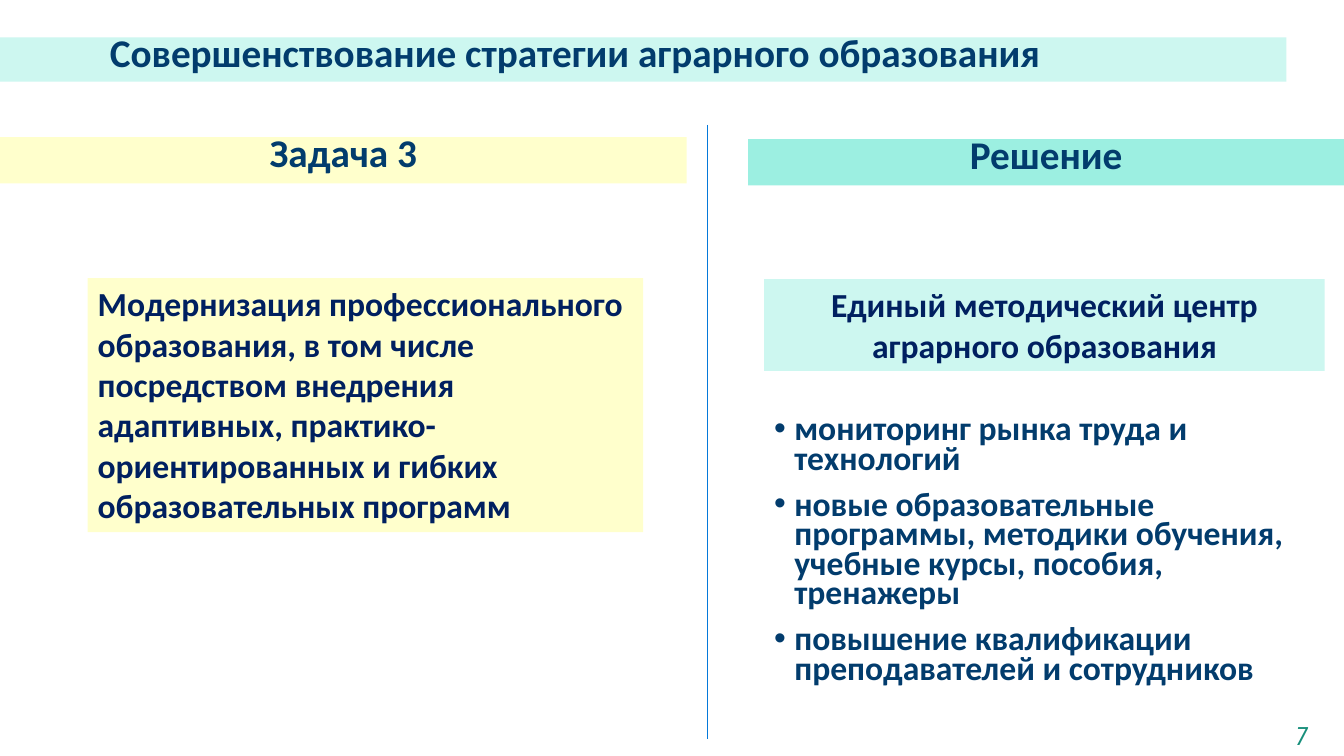
"""Builds a slide that sets an agrarian education task beside its solution."""
from dataclasses import dataclass
from typing import Optional

from lxml.etree import SubElement
from pptx import Presentation
from pptx.dml.color import RGBColor
from pptx.enum.shapes import MSO_CONNECTOR as Connector, MSO_SHAPE as Preset
from pptx.enum.text import MSO_ANCHOR as Anchor, MSO_AUTO_SIZE as AutoSize, PP_ALIGN as Align
from pptx.oxml.ns import qn
from pptx.util import Inches, Pt

COLORS = {
    "heading": "023C6D",
    "statement": "002060",
    "number": "178F7B",
    "divider": "0479DA",
    "yellow": "FFFFCC",
    "mint": "CDF7F0",
    "turquoise": "9CEFE1",
}


@dataclass
class Panel:
    text: str
    left: float
    top: float
    width: float
    height: float
    fill: str
    color: str = "heading"
    size: int = 28
    align: Align = Align.CENTER
    spacing: Optional[int] = 24
    inset: float = 0.1


PANELS = [
    Panel("Задача 3", 0, 1.36, 6.81, 0.46, "yellow"),
    Panel("Единый методический центр аграрного образования", 7.58, 2.77, 5.56, 0.91,
          "mint", "statement", 24, spacing=None),
    Panel("Модернизация профессионального образования, в том числе посредством внедрения "
          "адаптивных, практико-ориентированных и гибких образовательных программ",
          0.87, 2.76, 5.51, 2.52, "yellow", "statement", 24, Align.LEFT, None),
    Panel("Совершенствование стратегии аграрного образования", 0, 0.37, 12.76, 0.44,
          "mint", align=Align.LEFT, inset=1.09),
    Panel("Решение", 7.42, 1.38, 5.91, 0.46, "turquoise"),
]

MEASURES = [
    "мониторинг рынка труда и технологий",
    "новые образовательные программы, методики обучения, учебные курсы, пособия, тренажеры",
    "повышение квалификации преподавателей и сотрудников",
]


def rgb(name: str) -> RGBColor:
    return RGBColor.from_string(COLORS[name])


def write(frame, lines: list[str], *, color: str, size: int, font: str = "Calibri",
          bold: bool = True, italic: bool = False, align: Align = Align.LEFT,
          spacing: Optional[int] = None, before: int = 0, bullet: bool = False,
          inset: float = 0.1) -> None:
    frame.word_wrap = True
    frame.auto_size = AutoSize.SHAPE_TO_FIT_TEXT
    frame.vertical_anchor = Anchor.TOP
    frame.margin_left = Inches(inset)
    for index, line in enumerate(lines):
        paragraph = frame.add_paragraph() if index else frame.paragraphs[0]
        paragraph.alignment = align
        paragraph.space_before = Pt(before)
        if spacing:
            paragraph.line_spacing = Pt(spacing)
        if bullet:
            properties = paragraph._p.get_or_add_pPr()
            properties.set("marL", str(Inches(0.2)))
            properties.set("indent", str(Inches(-0.2)))
            SubElement(properties, qn("a:buFont"), typeface="Arial")
            SubElement(properties, qn("a:buChar"), char="•")
        run = paragraph.add_run()
        run.text = line
        run.font.name = font
        run.font.size = Pt(size)
        run.font.bold = bold
        run.font.italic = italic
        run.font.color.rgb = rgb(color)


def draw_panel(slide, panel: Panel) -> None:
    box = slide.shapes.add_shape(Preset.RECTANGLE, Inches(panel.left), Inches(panel.top),
                                 Inches(panel.width), Inches(panel.height))
    box.shadow.inherit = False
    box.fill.solid()
    box.fill.fore_color.rgb = rgb(panel.fill)
    box.line.fill.background()
    write(box.text_frame, [panel.text], color=panel.color, size=panel.size,
          align=panel.align, spacing=panel.spacing, inset=panel.inset)


def draw_divider(slide) -> None:
    divider = slide.shapes.add_connector(Connector.STRAIGHT, Inches(7.02), Inches(1.24),
                                         Inches(7.02), Inches(7.33))
    divider.line.color.rgb = rgb("divider")
    divider.line.width = Pt(0.5)
    SubElement(divider._element.spPr, qn("a:effectLst"))


def main() -> None:
    deck = Presentation()
    deck.slide_width, deck.slide_height = Inches(13.33), Inches(7.5)
    slide = deck.slides.add_slide(deck.slide_layouts[6])

    measures = slide.shapes.add_textbox(Inches(7.58), Inches(4.1), Inches(5.56), Inches(2.79))
    write(measures.text_frame, MEASURES, color="heading", size=24, spacing=21,
          before=12, bullet=True)
    draw_divider(slide)
    for panel in PANELS:
        draw_panel(slide, panel)
    number = slide.shapes.add_textbox(Inches(12.48), Inches(7.1), Inches(0.86), Inches(0.4))
    write(number.text_frame, ["7"], color="number", size=18, font="Roboto Condensed",
          bold=False, italic=True, align=Align.CENTER)

    deck.save("out.pptx")


if __name__ == "__main__":
    main()
